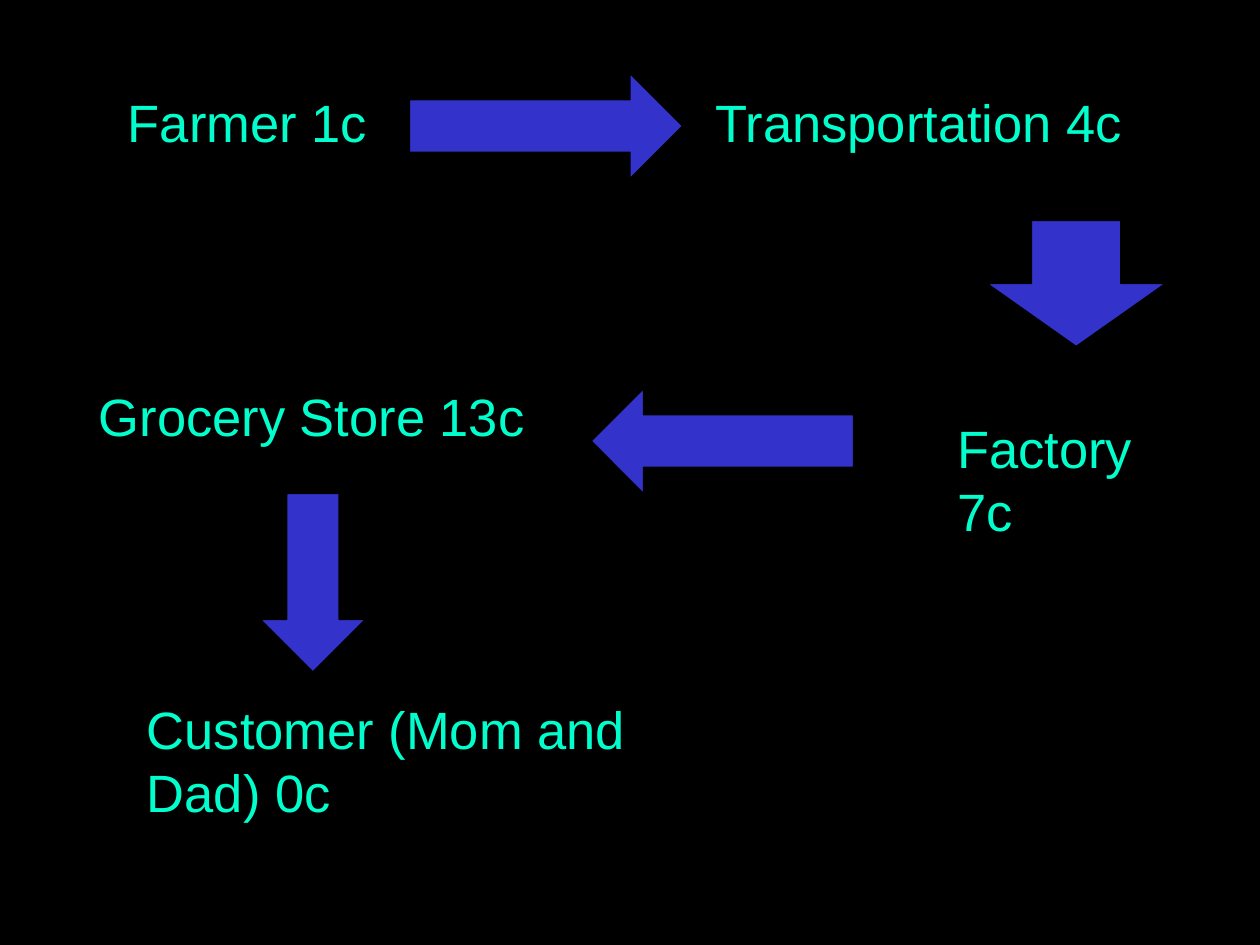
from pptx import Presentation
from pptx.dml.color import RGBColor
from pptx.enum.shapes import MSO_SHAPE
from pptx.enum.text import PP_ALIGN
from pptx.util import Inches, Pt

LEFT, CENTER = PP_ALIGN.LEFT, PP_ALIGN.CENTER
RIGHT_ARROW, LEFT_ARROW, DOWN_ARROW = (
    MSO_SHAPE.RIGHT_ARROW, MSO_SHAPE.LEFT_ARROW, MSO_SHAPE.DOWN_ARROW)

COLORS = {"background": "000000", "text": "00FFCC", "arrow": "3333CC"}
FONT = "Arial"
COLUMNS, ROWS = 12, 9  # grid used for the placement below
WIDTH, HEIGHT = 10, 7.5

# Places are (column, row, columns wide, rows high)
STAGES = [
    ("Farmer 1c", (1.1, 0.8, 2.54, 0.6), LEFT),
    ("Transportation 4c", (6.5, 0.8, 4.5, 1.08), CENTER),
    ("Factory 7c", (9, 3.9, 2.38, 0.6), LEFT),
    ("Grocery Store 13c", (0.32, 3.6, 5.3, 0.6), CENTER),
    ("Customer (Mom and Dad) 0c", (1.28, 6.58, 5.44, 0.96), LEFT),
]
ARROWS = [
    (RIGHT_ARROW, (3.9, 0.7, 2.6, 1)),
    (DOWN_ARROW, (9.4, 2.1, 1.7, 1.2)),
    (LEFT_ARROW, (5.63, 3.7, 2.5, 1)),
    (DOWN_ARROW, (2.48, 4.7, 1, 1.7)),
]


def color(name):
    return RGBColor.from_string(COLORS[name])


def on_grid(place):
    """Turn a place on the grid into left, top, width and height."""
    units = (WIDTH / COLUMNS, HEIGHT / ROWS) * 2
    return [Inches(count * unit) for count, unit in zip(place, units)]


def add_text(page, text, place, align=LEFT, size=30, leading=36):
    box = page.shapes.add_textbox(*on_grid(place))
    box.text_frame.word_wrap = True
    para = box.text_frame.paragraphs[0]
    para.alignment = align
    para.line_spacing = Pt(leading)
    span = para.add_run()
    span.text = text
    span.font.name = FONT
    span.font.size = Pt(size)
    span.font.color.rgb = color("text")


def add_arrow(page, kind, place):
    arrow = page.shapes.add_shape(kind, *on_grid(place))
    arrow.shadow.inherit = False
    arrow.fill.solid()
    arrow.fill.fore_color.rgb = color("arrow")
    arrow.line.color.rgb = color("background")
    arrow.line.width = Pt(0.75)


def main():
    deck = Presentation()
    deck.slide_width, deck.slide_height = Inches(WIDTH), Inches(HEIGHT)
    page = deck.slides.add_slide(deck.slide_layouts[6])
    page.background.fill.solid()
    page.background.fill.fore_color.rgb = color("background")
    for text, place, align in STAGES:
        add_text(page, text, place, align=align)
    for kind, place in ARROWS:
        add_arrow(page, kind, place)
    deck.save("out.pptx")


if __name__ == "__main__":
    main()
